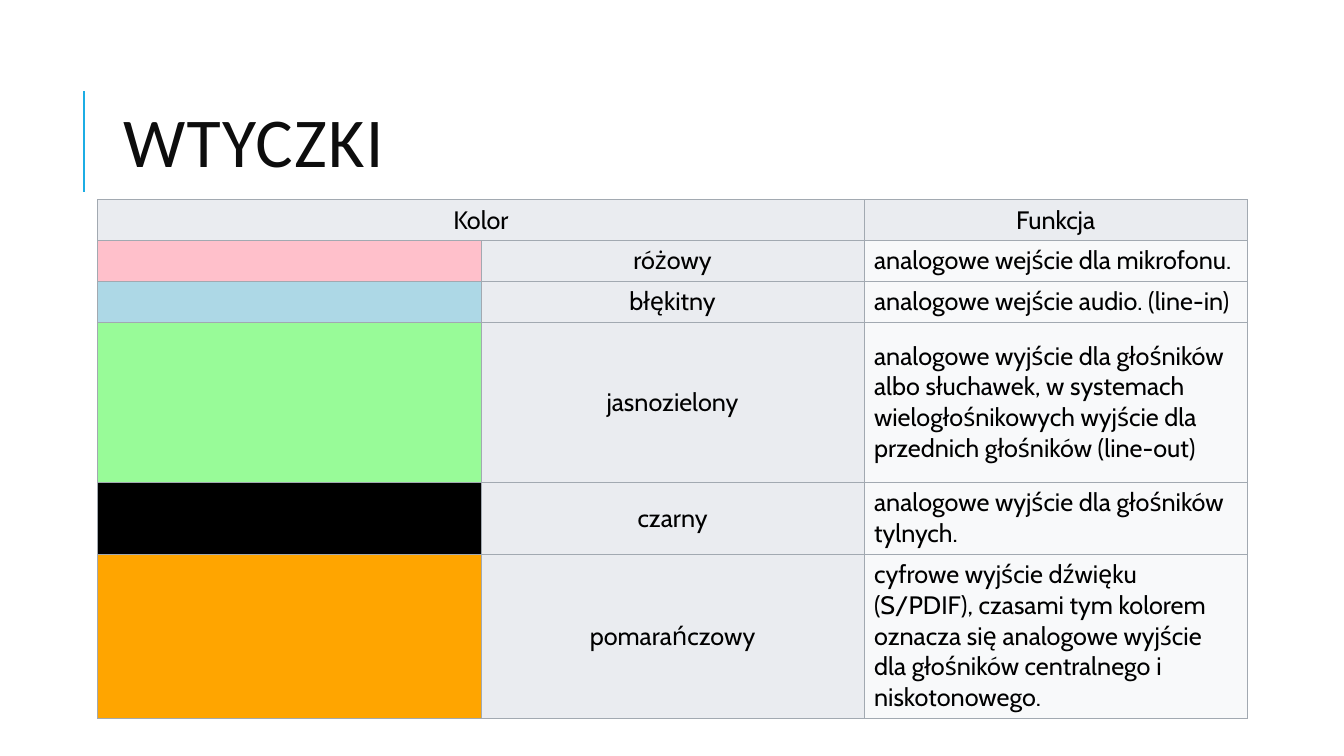
from lxml import etree
from pptx import Presentation
from pptx.dml.color import RGBColor
from pptx.enum.shapes import MSO_CONNECTOR as Connector
from pptx.enum.text import MSO_ANCHOR as Anchor, MSO_AUTO_SIZE as AutoSize, PP_ALIGN as Align
from pptx.oxml.ns import qn
from pptx.util import Pt

PX = 9144  # 100 px to the inch
COLORS = {
    "accent": "1CADE4", "title": "0D0D0D", "text": "000000",
    "border": "A2A9B1", "header": "EAECF0", "function": "F8F9FA",
    "różowy": "FFC0CB", "błękitny": "ADD8E6", "jasnozielony": "98FB98",
    "czarny": "000000", "pomarańczowy": "FFA500",
}
PLUGS = [
    ("różowy", 40, "analogowe wejście dla mikrofonu."),
    ("błękitny", 40, "analogowe wejście audio. (line-in)"),
    ("jasnozielony", 159, "analogowe wyjście dla głośników albo słuchawek, w systemach "
     "wielogłośnikowych wyjście dla przednich głośników (line-out)"),
    ("czarny", 69, "analogowe wyjście dla głośników tylnych."),
    ("pomarańczowy", 129, "cyfrowe wyjście dźwięku (S/PDIF), czasami tym kolorem oznacza się "
     "analogowe wyjście dla głośników centralnego i niskotonowego."),
]
HEADER_HEIGHT = 40
COLUMN_WIDTH = 380


def add_text(paragraph, text, font_name, size, color):
    run = paragraph.add_run()
    run.text = text
    run.font.name = font_name
    run.font.size = Pt(size)
    run.font.color.rgb = RGBColor.from_string(COLORS[color])
    return run


def format_cell(cell, fill, text="", align=Align.CENTER):
    cell.fill.solid()
    cell.fill.fore_color.rgb = RGBColor.from_string(COLORS[fill])
    cell.vertical_anchor = Anchor.MIDDLE
    cell.margin_left = cell.margin_right = 10 * PX
    cell.margin_top = cell.margin_bottom = 5 * PX
    if text:
        paragraph = cell.text_frame.paragraphs[0]
        paragraph.alignment = align
        add_text(paragraph, text, "Cabin", 18, "text")
    # Borders stand before the fill in the cell properties
    properties = cell._tc.get_or_add_tcPr()
    for position, side in enumerate(("lnL", "lnR", "lnT", "lnB")):
        border = etree.Element(qn(f"a:{side}"), w=str(Pt(0.6)))
        solid = etree.SubElement(border, qn("a:solidFill"))
        etree.SubElement(solid, qn("a:srgbClr"), val=COLORS["border"])
        properties.insert(position, border)


presentation = Presentation()
presentation.slide_width = 1333 * PX
presentation.slide_height = 750 * PX
slide = presentation.slides.add_slide(presentation.slide_layouts[5])

# Accent line beside the title
accent = slide.shapes.add_connector(Connector.STRAIGHT, 83 * PX, 190 * PX, 83 * PX, 90 * PX)
accent.line.color.rgb = RGBColor.from_string(COLORS["accent"])
accent.line.width = Pt(1.5)
etree.SubElement(accent._element.spPr, qn("a:effectLst"))

# Title
title = slide.shapes.title
title.left, title.top, title.width, title.height = 112 * PX, 64 * PX, 1063 * PX, 164 * PX
title_frame = title.text_frame
title_frame.auto_size = AutoSize.NONE
title_frame.vertical_anchor = Anchor.MIDDLE
title_paragraph = title_frame.paragraphs[0]
title_paragraph.alignment = Align.LEFT
title_paragraph.line_spacing = 0.8
title_run = add_text(title_paragraph, "WTYCZKI", "Calibri", 50, "title")
title_run.font._element.set("spc", "100")

# Table of plug colours
table_height = HEADER_HEIGHT + sum(height for _, height, _ in PLUGS)
table = slide.shapes.add_table(len(PLUGS) + 1, 3, 97 * PX, 198 * PX,
                               3 * COLUMN_WIDTH * PX, table_height * PX).table
table.first_row = False
table.horz_banding = False
for column in table.columns:
    column.width = COLUMN_WIDTH * PX

# Header row
table.rows[0].height = HEADER_HEIGHT * PX
table.cell(0, 0).merge(table.cell(0, 1))
for column_index, heading in enumerate(("Kolor", "", "Funkcja")):
    format_cell(table.cell(0, column_index), "header", heading)

# One row per plug: swatch, colour name, function
for row_index, (color_name, height, function) in enumerate(PLUGS, start=1):
    table.rows[row_index].height = height * PX
    format_cell(table.cell(row_index, 0), color_name)
    format_cell(table.cell(row_index, 1), "header", color_name)
    format_cell(table.cell(row_index, 2), "function", function, Align.LEFT)

presentation.save("out.pptx")
